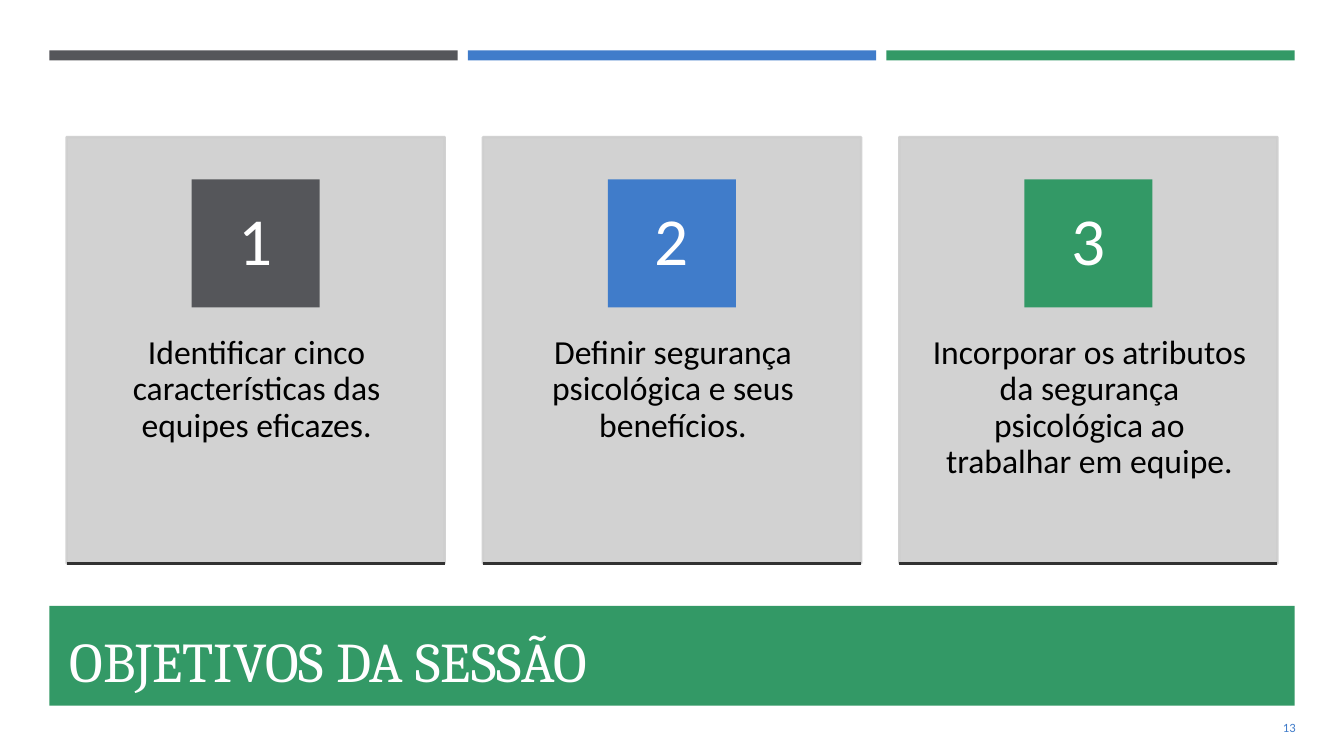
import pptx
import pptx.dml.color
import pptx.enum.shapes
import pptx.enum.text
import pptx.oxml.ns
import pptx.util
from lxml import etree

Inches = pptx.util.Inches
Pt = pptx.util.Pt
RGBColor = pptx.dml.color.RGBColor
Align = pptx.enum.text.PP_ALIGN
Anchor = pptx.enum.text.MSO_ANCHOR
qn = pptx.oxml.ns.qn

GRAY = RGBColor(0x55, 0x56, 0x5A)
BLUE = RGBColor(0x40, 0x7C, 0xCA)
GREEN = RGBColor(0x33, 0x99, 0x66)
CARD = RGBColor(0xCE, 0xCE, 0xCE)
DARK = RGBColor(0x32, 0x32, 0x32)
BLACK = RGBColor(0, 0, 0)
WHITE = RGBColor(0xFF, 0xFF, 0xFF)
SNOW = RGBColor(0xFF, 0xFE, 0xFF)


class Deck:
    body = "Calibri"
    head = "Cambria"
    edge = Pt(1.75)

    def __init__(self):
        self.file = pptx.Presentation()
        self.file.slide_width = Inches(13.33)
        self.file.slide_height = Inches(7.5)
        self.slide = self.file.slides.add_slide(self.file.slide_layouts[5])

    def style(self, shape, text, size, color, font=body, align=Align.LEFT,
              anchor=Anchor.MIDDLE, pad=(0.1, 0.05, 0.1, 0.05), space=1.0):
        frame = shape.text_frame
        frame.text = text
        frame.word_wrap = True
        frame.auto_size = pptx.enum.text.MSO_AUTO_SIZE.NONE
        frame.vertical_anchor = anchor
        (frame.margin_left, frame.margin_top,
         frame.margin_right, frame.margin_bottom) = map(Inches, pad)
        line = frame.paragraphs[0]
        line.alignment = align
        line.line_spacing = space
        face = line.runs[0].font
        face.name = font
        face.size = Pt(size)
        face.color.rgb = color

    def rect(self, box, color):
        shape = self.slide.shapes.add_shape(
            pptx.enum.shapes.MSO_SHAPE.RECTANGLE, *map(Inches, box))
        shape.shadow.inherit = False
        shape.fill.solid()
        shape.fill.fore_color.rgb = color
        shape.line.fill.background()
        return shape

    def panel(self, box, color):
        shape = self.rect(box, color)
        shape.line.color.rgb = color
        shape.line.width = self.edge
        for tint in shape.element.spPr.iter(qn("a:srgbClr")):
            etree.SubElement(tint, qn("a:alpha")).set("val", "90000")

    def rule(self, left, top, width, color):
        line = self.slide.shapes.add_connector(
            pptx.enum.shapes.MSO_CONNECTOR.STRAIGHT, Inches(left),
            Inches(top), Inches(left + width), Inches(top))
        line.line.color.rgb = color
        line.line.width = self.edge
        etree.SubElement(line.element.spPr, qn("a:effectLst"))

    def label(self, box, text, size, color, **look):
        shape = self.slide.shapes.add_textbox(*map(Inches, box))
        self.style(shape, text, size, color, **look)

    def title(self, box, text):
        shape = self.slide.shapes.title
        shape.left, shape.top, shape.width, shape.height = map(Inches, box)
        self.style(shape, text, 40, SNOW, font=self.head)
        shape.element.getparent().append(shape.element)

    def card(self, left, num, text, color):
        self.panel((left, 1.36, 3.75, 4.23), CARD)
        self.label((left, 2.97, 3.75, 2.54), text, 24, BLACK,
                   align=Align.CENTER, anchor=Anchor.TOP,
                   pad=(0.31, 0.36, 0.29, 0.36), space=0.9)
        badge = self.rect((left + 1.24, 1.78, 1.27, 1.27), color)
        self.style(badge, str(num), 48, WHITE, align=Align.CENTER,
                   pad=(0.1, 0.01, 0.1, 0.01), space=0.9)
        self.rule(left, 5.59, 3.75, DARK)


def main():
    deck = Deck()
    goals = [
        ("Identificar cinco características das equipes eficazes.", GRAY),
        ("Definir segurança psicológica e seus benefícios.", BLUE),
        ("Incorporar os atributos da segurança psicológica ao "
         "trabalhar em equipe.", GREEN),
    ]
    for i, (text, color) in enumerate(goals):
        deck.rect((0.49 + 4.15 * i, 0.5, 4.05, 0.1), color)
        deck.card(0.66 + 4.13 * i, i + 1, text, color)
    deck.rect((0.49, 6.01, 12.35, 0.99), GREEN)
    deck.title((0.59, 6.11, 12.06, 0.87), "OBJETIVOS DA SESSÃO")
    deck.label((11.8, 7.02, 1.15, 0.4), "13", 9, BLUE, align=Align.RIGHT)
    deck.file.save("out.pptx")


if __name__ == "__main__":
    main()
